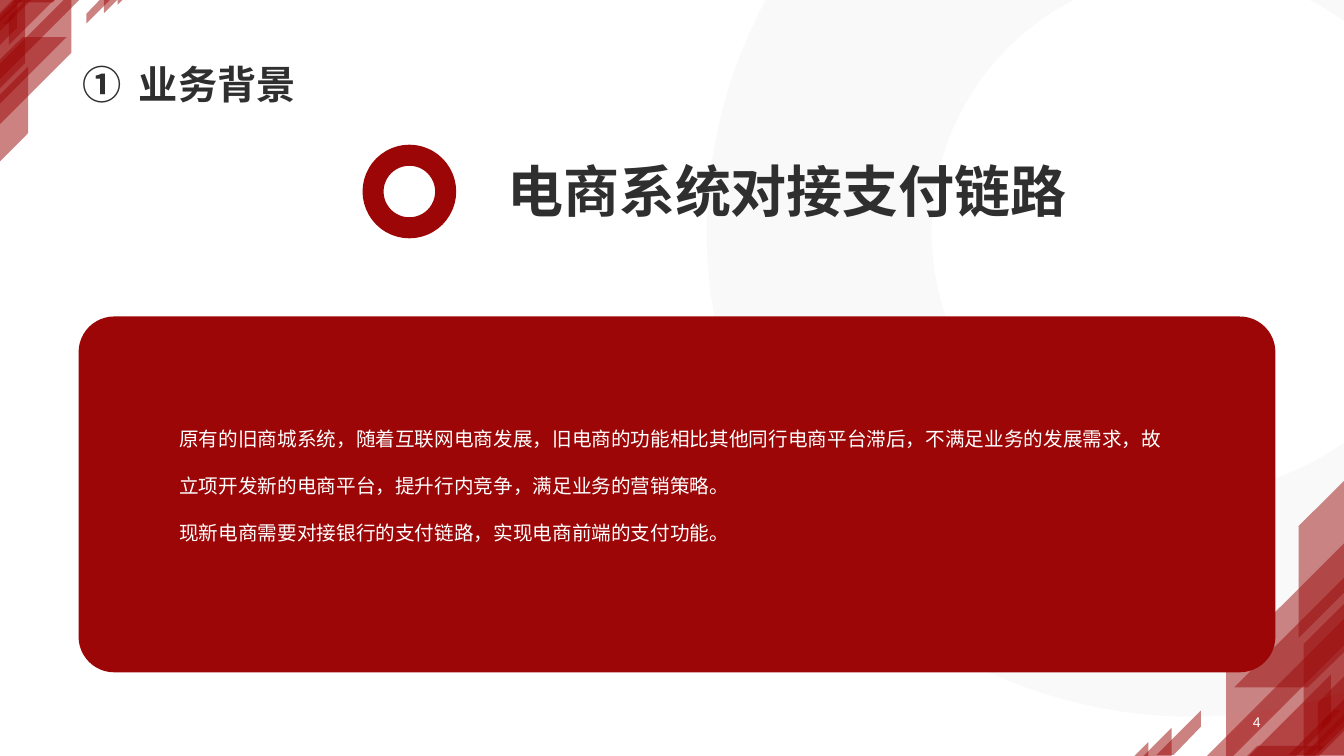
from math import cos, radians, sin

from lxml.etree import SubElement
from pptx import Presentation
from pptx.dml.color import RGBColor
from pptx.enum.shapes import MSO_SHAPE
from pptx.enum.text import MSO_ANCHOR, MSO_AUTO_SIZE, PP_ALIGN
from pptx.oxml.ns import qn
from pptx.util import Inches, Pt

COLORS = {"red": "9C0606", "ink": "2F2F2F", "white": "FFFFFF", "ring": "979797"}

deck = Presentation()
deck.slide_width, deck.slide_height = Inches(13.33), Inches(7.5)
slide = deck.slides.add_slide(deck.slide_layouts[6])
shapes = slide.shapes


def add_outline(contours, color, opacity):
    """Draw closed contours, in inches, as one translucent freeform."""
    contours = [[(Inches(x), Inches(y)) for x, y in points] for points in contours]
    builder = shapes.build_freeform(*contours[0][0], scale=1.0)
    for number, points in enumerate(contours):
        if number:
            builder.move_to(*points[0])
        builder.add_line_segments(points[1:], close=True)
    outline = builder.convert_to_shape()
    outline.shadow.inherit = False
    outline.line.fill.background()
    outline.fill.solid()
    outline.fill.fore_color.rgb = RGBColor.from_string(COLORS[color])
    fill_color = outline.element.spPr.find(qn("a:solidFill")).find(qn("a:srgbClr"))
    SubElement(fill_color, qn("a:alpha"), val=str(opacity * 1000))


def add_text(box, paragraphs, font, align=PP_ALIGN.LEFT, spacing=None, **frame_format):
    """Add a wrapped text box; font and frame_format hold attribute values."""
    frame = shapes.add_textbox(*map(Inches, box)).text_frame
    frame.word_wrap = True
    for name, value in frame_format.items():
        setattr(frame, name, value)
    for number, text in enumerate(paragraphs):
        paragraph = frame.add_paragraph() if number else frame.paragraphs[0]
        paragraph.alignment = align
        paragraph.line_spacing = spacing
        run = paragraph.add_run()
        run.text = text
        run.font.name = "Arial"
        run.font.color.rgb = RGBColor.from_string(COLORS[font["color"]])
        for name in font.keys() - {"color"}:
            setattr(run.font, name, font[name])
    return frame


# Corner shards: lower right, then turned half round and shrunk at upper left
shards = [
    [(13.35, 7.07), (12.93, 7.49), (13.35, 7.49)],
    [(13.35, 6.69), (13.07, 6.97), (13.07, 7.47), (13.35, 7.19)],
    [(13.23, 7.04), (13.11, 7.16), (13.11, 7.23), (13.3, 7.04)],
    [(13.35, 4.75), (12.88, 5.22), (12.88, 6.33), (13.35, 5.86)],
    [(13.35, 5.37), (12.16, 6.56), (12.16, 7.57), (13.35, 6.38)],
    [(13.35, 5.71), (12.24, 6.82), (12.97, 6.82), (13.35, 6.45)],
    [(12.87, 7.71), (13.35, 7.23), (13.35, 6.12), (11.76, 7.71)],
    [(11.64, 7.49), (11.91, 7.21), (11.91, 7.05), (11.47, 7.49)],
    [(13.18, 7.71), (13.35, 7.54), (13.35, 5.97), (12.93, 6.39), (12.93, 7.71)],
    [(12.83, 7.71), (13.14, 7.4), (12.47, 7.4), (12.16, 7.71)],
    [(11.62, 7.71), (11.62, 7.22), (11.13, 7.71)],
    [(13.35, 6.92), (12.78, 7.49), (12.99, 7.49), (13.35, 7.13)],
    [(12.64, 7.71), (13.2, 7.16), (13.2, 6.69), (12.18, 7.71)],
    [(11.22, 7.78), (11.39, 7.61), (11.39, 7.36), (10.97, 7.78)],
]
shrink = 0.595
for shard in shards:
    add_outline([shard], "red", 50)
for shard in shards:
    turned = [((13.35 - x) * shrink, (7.44 - y) * shrink) for x, y in shard]
    add_outline([turned], "red", 50)

# Page number and heading
add_text((9.69, 7.04, 2.91, 0.24), ["4"], {"size": Pt(10), "color": "white"},
         PP_ALIGN.RIGHT, vertical_anchor=MSO_ANCHOR.MIDDLE)
heading = add_text((0.72, 0, 11.88, 1.12), ["业务背景"],
                   {"size": Pt(28), "bold": True, "color": "ink"},
                   spacing=0.9, vertical_anchor=MSO_ANCHOR.BOTTOM)
numbering = heading.paragraphs[0]._p.get_or_add_pPr()
numbering.set("marL", str(Inches(0.56)))
numbering.set("indent", str(Inches(-0.56)))
SubElement(numbering, qn("a:buFont"), typeface="+mj-lt")
SubElement(numbering, qn("a:buAutoNum"), type="circleNumDbPlain")

# Pale ring cut off by the top and right edges: radius, start and end angle
arcs = []
for radius, start, end in [(4.81, 71, 209), (2.58, 244.5, 53), (2.58, -64.5, -53)]:
    angles = [radians(start + (end - start) * step / 60) for step in range(61)]
    arcs.append([(11.82 + radius * cos(a), 2.3 + radius * sin(a)) for a in angles])
outer_arc, inner_arc, corner_arc = arcs
add_outline([outer_arc + inner_arc, corner_arc + [(13.38, -0.03)]], "ring", 5)

# Circle marker and main title
marker = shapes.add_shape(MSO_SHAPE.OVAL, *map(Inches, (3.7, 1.54, 0.72, 0.72)))
marker.shadow.inherit = False
marker.fill.background()
marker.line.color.rgb = RGBColor.from_string(COLORS["red"])
marker.line.width = Pt(15)
add_text((1.87, 1.5, 11.87, 0.77), ["电商系统对接支付链路"],
         {"size": Pt(40), "bold": True, "color": "ink"}, PP_ALIGN.CENTER,
         auto_size=MSO_AUTO_SIZE.SHAPE_TO_FIT_TEXT)

# Background panel with its text
panel = shapes.add_shape(MSO_SHAPE.ROUNDED_RECTANGLE, *map(Inches, (0.78, 3.14, 11.87, 3.53)))
panel.adjustments[0] = 0.1
panel.shadow.inherit = False
panel.line.fill.background()
panel.fill.solid()
panel.fill.fore_color.rgb = RGBColor.from_string(COLORS["red"])
background = [
    "原有的旧商城系统，随着互联网电商发展，旧电商的功能相比其他同行电商平台滞后，不满足业务的发展需求，"
    "故立项开发新的电商平台，提升行内竞争，满足业务的营销策略。",
    "现新电商需要对接银行的支付链路，实现电商前端的支付功能。",
]
add_text((1.68, 3.95, 10.07, 1.44), background, {"size": Pt(14), "color": "white"},
         spacing=2.0, auto_size=MSO_AUTO_SIZE.SHAPE_TO_FIT_TEXT)

deck.save("out.pptx")
